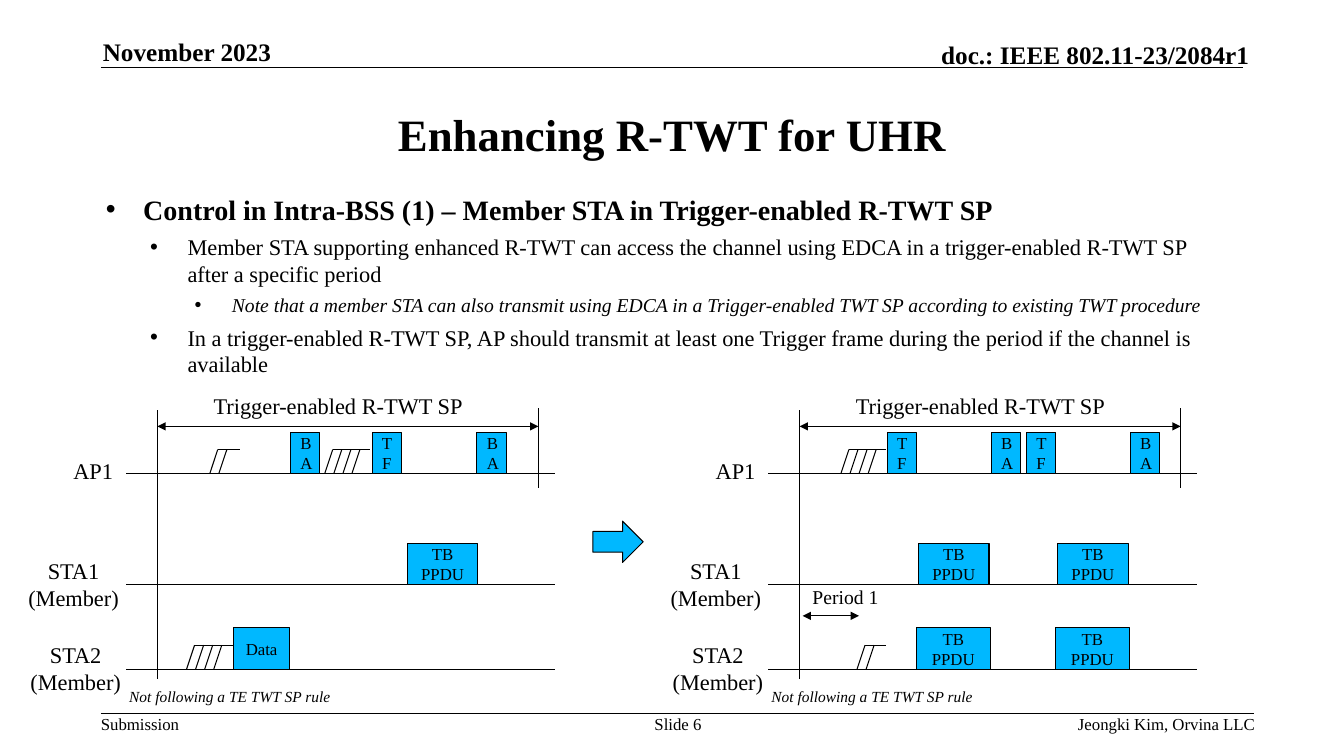
from lxml.etree import SubElement
from pptx import Presentation
from pptx.dml.color import RGBColor
from pptx.enum.shapes import MSO_CONNECTOR, MSO_SHAPE
from pptx.enum.text import MSO_ANCHOR, MSO_AUTO_SIZE, PP_ALIGN
from pptx.oxml.ns import qn
from pptx.util import Pt

PX = 9144  # 100 px to the inch
COLORS = {"ink": "000000", "frame": "00B8FF", "paper": "FFFFFF"}
LEFT, CENTER, RIGHT = PP_ALIGN.LEFT, PP_ALIGN.CENTER, PP_ALIGN.RIGHT

AP1, STA1, STA2 = 470, 580, 664  # baselines of the timelines
FRAME_HEIGHT = 41
BACKOFF_HEIGHT, BACKOFF_SLANT, BACKOFF_STEP = 24, 8, 9
PANEL_STEP = 637

# (text, left, width, baseline) and (left, slashes, right, baseline)
BEFORE_FRAMES = [
    ("BA", 288, 29, AP1), ("TF", 369, 29, AP1), ("BA", 473, 29, AP1),
    ("TB PPDU", 404, 70, STA1), ("Data", 232, 55, STA2),
]
BEFORE_BACKOFFS = [(208, 2, 238, AP1), (322, 4, 367, AP1), (185, 4, 231, STA2)]
AFTER_FRAMES = [
    (text, left + shift, width, baseline)
    for shift in (0, 138)
    for text, left, width, baseline in [
        ("TF", 243, 29, AP1), ("BA", 346, 29, AP1),
        ("TB PPDU", 274, 70, STA1), ("TB PPDU", 272, 73, STA2),
    ]
]
AFTER_BACKOFFS = [(197, 4, 242, AP1), (213, 2, 242, STA2)]

# (level, size, bold, italic, space before, text)
BULLETS = [
    (0, 20, True, False, 6,
     "Control in Intra-BSS (1) – Member STA in Trigger-enabled R-TWT SP"),
    (1, 16, False, False, 5,
     "Member STA supporting enhanced R-TWT can access the channel using EDCA "
     "in a trigger-enabled R-TWT SP after a specific period"),
    (2, 14, False, True, 4.5,
     "Note that a member STA can also transmit using EDCA in a Trigger-enabled "
     "TWT SP according to existing TWT procedure"),
    (1, 16, False, False, 5,
     "In a trigger-enabled R-TWT SP, AP should transmit at least one Trigger "
     "frame during the period if the channel is available"),
]


def color(name):
    return RGBColor.from_string(COLORS[name])


class SlideBuilder:
    def __init__(self, slide, font_name="Times New Roman"):
        self.slide = slide
        self.font_name = font_name
        slide.background.fill.solid()
        slide.background.fill.fore_color.rgb = color("paper")

    def place(self, shape, left, top, width, height):
        shape.left, shape.top = left * PX, top * PX
        shape.width, shape.height = width * PX, height * PX

    def style(self, para, size, align=LEFT, bold=False, italic=False):
        para.alignment = align
        para.font.name = self.font_name
        para.font.size = Pt(size)
        para.font.bold = bold
        para.font.italic = italic
        para.font.color.rgb = color("ink")

    def title(self, text, *area):
        box = self.slide.shapes.title
        self.place(box, *area)
        frame = box.text_frame
        frame.text = text
        frame.auto_size = MSO_AUTO_SIZE.NONE
        frame.vertical_anchor = MSO_ANCHOR.MIDDLE
        self.style(frame.paragraphs[0], 32, CENTER, bold=True)

    def bullets(self, items, *area):
        box = self.slide.placeholders[1]
        self.place(box, *area)
        frame = box.text_frame
        frame.text = "\n".join(item[-1] for item in items)
        frame.auto_size = MSO_AUTO_SIZE.NONE
        for para, (level, size, bold, italic, before, _) in zip(frame.paragraphs, items):
            para.level = level
            para.space_before = Pt(before)
            self.style(para, size, LEFT, bold, italic)
            properties = para._p.get_or_add_pPr()
            properties.set("marL", str((37 + 44 * level) * PX))
            properties.set("indent", str(-37 * PX))
            bullet = properties.makeelement(qn("a:buChar"), {"char": "•"})
            properties.find(qn("a:defRPr")).addprevious(bullet)

    def text(self, text, left, top, width, height, size, align=LEFT, *,
             bold=False, italic=False, wrap=True, padded=True, anchor=MSO_ANCHOR.TOP):
        box = self.slide.shapes.add_textbox(
            left * PX, top * PX, width * PX, height * PX)
        frame = box.text_frame
        frame.word_wrap = wrap
        frame.vertical_anchor = anchor
        if not padded:
            frame.margin_left = frame.margin_right = 0
            frame.margin_top = frame.margin_bottom = 0
        frame.text = text
        for para in frame.paragraphs:
            self.style(para, size, align, bold, italic)

    def line(self, x1, y1, x2, y2, weight=0.75, arrows=False):
        line = self.slide.shapes.add_connector(
            MSO_CONNECTOR.STRAIGHT, x1 * PX, y1 * PX, x2 * PX, y2 * PX)
        line.line.color.rgb = color("ink")
        line.line.width = Pt(weight)
        if arrows:
            for end in ("a:headEnd", "a:tailEnd"):
                SubElement(line.line._get_or_add_ln(), qn(end), type="triangle")
        SubElement(line._element.spPr, qn("a:effectLst"))

    def block(self, kind, left, top, width, height, text=""):
        shape = self.slide.shapes.add_shape(
            kind, left * PX, top * PX, width * PX, height * PX)
        shape.shadow.inherit = False
        shape.fill.solid()
        shape.fill.fore_color.rgb = color("frame")
        shape.line.color.rgb = color("ink")
        shape.line.width = Pt(0.75)
        if text:
            shape.text_frame.text = text
            shape.text_frame.word_wrap = True
            shape.text_frame.vertical_anchor = MSO_ANCHOR.MIDDLE
            self.style(shape.text_frame.paragraphs[0], 12, CENTER)

    def backoff(self, left, slashes, right, baseline):
        """Draw the slanted contention slots with their top edge."""
        top = baseline - BACKOFF_HEIGHT
        for slot in range(slashes):
            x = left + slot * BACKOFF_STEP
            self.line(x + BACKOFF_SLANT, top, x, baseline)
        self.line(left + BACKOFF_SLANT, top, right, top)

    def panel(self, offset, frames, backoffs):
        """Draw one timing diagram, shifted right by offset."""
        for baseline in (AP1, STA1, STA2):
            self.line(offset + 125, baseline, offset + 550, baseline)
        start, end = offset + 156, offset + 534
        self.line(start, 407, start, 674)
        self.line(end, 405, end, 484)
        self.line(start, 423, end, 423, arrows=True)
        self.text("Trigger-enabled R-TWT SP", offset + 202, 384, 271, 37, 16, wrap=False)
        self.text("AP1", offset + 63, 449, 60, 37, 16, wrap=False)
        self.text("STA1\n(Member)", offset + 15, 548, 116, 64, 16, CENTER)
        self.text("STA2\n(Member)", offset + 19, 631, 112, 64, 16, CENTER)
        self.text("Not following a TE TWT SP rule", offset + 78, 677, 300, 29, 11,
                  CENTER, italic=True)
        for left, slashes, right, baseline in backoffs:
            self.backoff(offset + left, slashes, offset + right, baseline)
        for text, left, width, baseline in frames:
            self.block(MSO_SHAPE.RECTANGLE, offset + left, baseline - FRAME_HEIGHT,
                       width, FRAME_HEIGHT, text)


def main():
    deck = Presentation()
    deck.slide_width, deck.slide_height = 1333 * PX, 750 * PX
    page = SlideBuilder(deck.slides.add_slide(deck.slide_layouts[1]))

    page.line(100, 67, 1233, 67, weight=1)
    page.line(100, 708, 1244, 708, weight=1)
    page.text("November 2023", 102, 36, 273, 30, 18, bold=True, padded=False,
              anchor=MSO_ANCHOR.BOTTOM)
    page.text("doc.: IEEE 802.11-23/2084r1", 729, 39, 510, 30, 18, RIGHT, bold=True,
              padded=False, anchor=MSO_ANCHOR.BOTTOM)
    page.text("Submission", 100, 708, 79, 20, 12, padded=False, wrap=False)
    page.text("Slide 6", 634, 708, 77, 40, 12, CENTER, padded=False)
    page.text("Jeongki Kim, Orvina LLC", 781, 708, 464, 20, 12, RIGHT, padded=False)

    page.title("Enhancing R-TWT for UHR", 100, 75, 1133, 116)
    page.bullets(BULLETS, 95, 186, 1133, 450)

    page.panel(0, BEFORE_FRAMES, BEFORE_BACKOFFS)
    page.block(MSO_SHAPE.RIGHT_ARROW, 588, 517, 50, 41)
    page.panel(PANEL_STEP, AFTER_FRAMES, AFTER_BACKOFFS)
    page.text("Period 1", 796, 575, 92, 34, 14)
    page.line(796, 611, 852, 611, arrows=True)

    deck.save("out.pptx")


if __name__ == "__main__":
    main()
